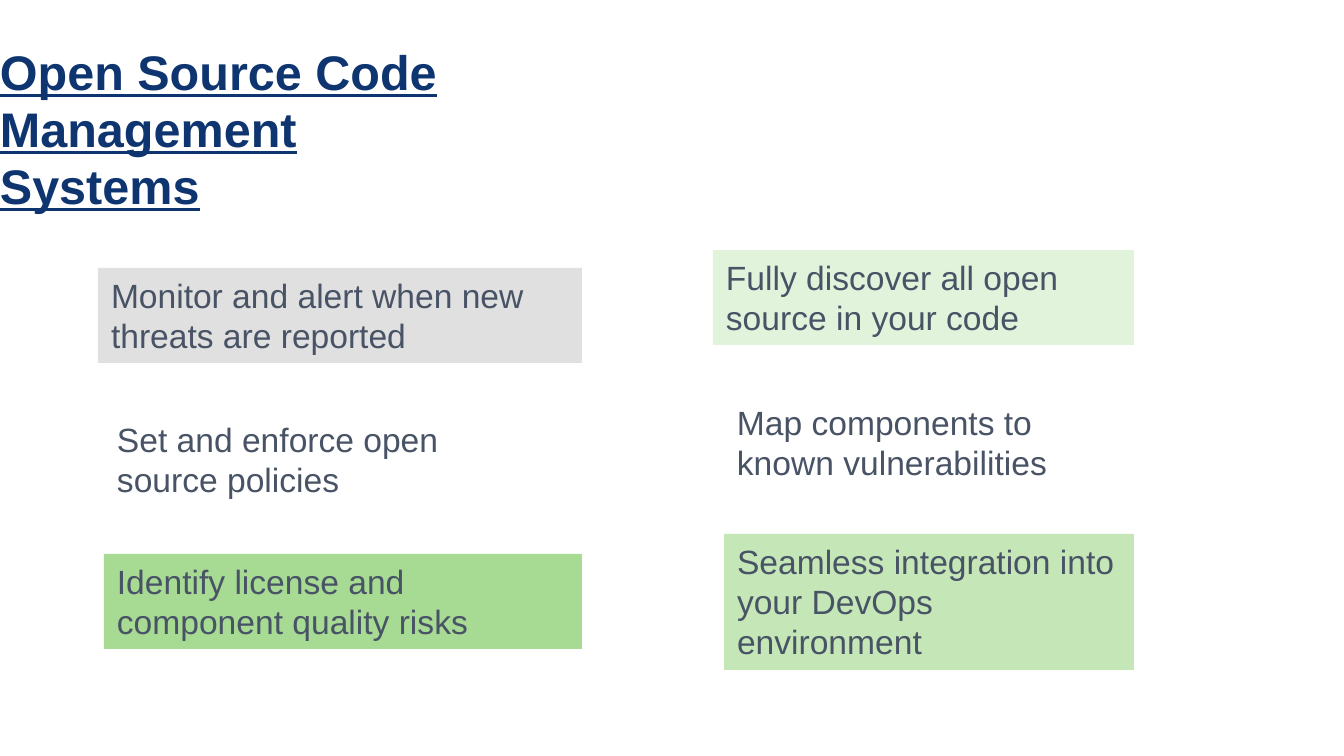
from dataclasses import dataclass

from pptx import Presentation
from pptx.dml.color import RGBColor
from pptx.enum.shapes import MSO_SHAPE
from pptx.enum.text import MSO_ANCHOR, MSO_AUTO_SIZE, PP_ALIGN
from pptx.util import Emu, Pt

SCALE = 914400 / 134.4


@dataclass(frozen=True)
class Theme:
    """Colours and type sizes of the slide."""
    font: str = "Arial"
    navy: str = "0E3570"
    slate: str = "495366"
    gray: str = "E0E0E0"
    pale: str = "E2F3DB"
    light: str = "C5E7B7"
    green: str = "A7DA93"
    head: int = 26
    body: int = 18


THEME = Theme()


def px(num):
    """Turn px into EMU."""
    return Emu(round(num * SCALE))


def write(slide, text, box, fill=None, size=THEME.body, color=THEME.slate,
          bold=False, line=False, grow=True, left=13, space=None):
    """Place text in a box, on a filled rectangle if a fill is given."""
    area = [px(num) for num in box]
    if fill:
        shape = slide.shapes.add_shape(MSO_SHAPE.RECTANGLE, *area)
        shape.shadow.inherit = False
        shape.fill.solid()
        shape.fill.fore_color.rgb = RGBColor.from_string(fill)
        shape.line.fill.background()
    else:
        shape = slide.shapes.add_textbox(*area)
    frame = shape.text_frame
    frame.word_wrap = True
    frame.auto_size = MSO_AUTO_SIZE.SHAPE_TO_FIT_TEXT if grow else MSO_AUTO_SIZE.NONE
    frame.vertical_anchor = MSO_ANCHOR.TOP
    frame.margin_left = px(left)
    para = frame.paragraphs[0]
    para.alignment = PP_ALIGN.LEFT
    para.line_spacing = space
    run = para.add_run()
    run.text = text
    font = run.font
    font.name = THEME.font
    font.size = Pt(size)
    font.bold = bold
    font.underline = line
    font.color.rgb = RGBColor.from_string(color)
    return shape


def title(slide, box):
    """Write the underlined heading."""
    write(slide, "Open Source Code Management Systems", box, size=THEME.head,
          color=THEME.navy, bold=True, line=True, grow=False, left=0, space=0.98)


def column(slide, box, cards):
    """Stack cards, each offset from the corner of the box."""
    x, y, wide, _ = box
    for text, dx, dy, trim, high, fill in cards:
        write(slide, text, (x + dx, y + dy, wide - dx - trim, high), fill=fill)


def main():
    """Build and save the slide."""
    deck = Presentation()
    deck.slide_width, deck.slide_height = px(1344), px(756)
    slide = deck.slides.add_slide(deck.slide_layouts[6])
    title(slide, (0, 38, 470, 133))
    column(slide, (98, 268, 484, 381), [
        ("Monitor and alert when new threats are reported", 0, 0, 0, 95, THEME.gray),
        ("Set and enforce open source policies", 6, 144, 32, 95, None),
        ("Identify license and component quality risks", 6, 286, 0, 95, THEME.green),
    ])
    column(slide, (713, 250, 421, 420), [
        ("Fully discover all open source in your code", 0, 0, 0, 95, THEME.pale),
        ("Map components to known vulnerabilities", 11, 145, 9, 95, None),
        ("Seamless integration into your DevOps environment", 11, 284, 0, 136,
         THEME.light),
    ])
    deck.save("out.pptx")


if __name__ == "__main__":
    main()
